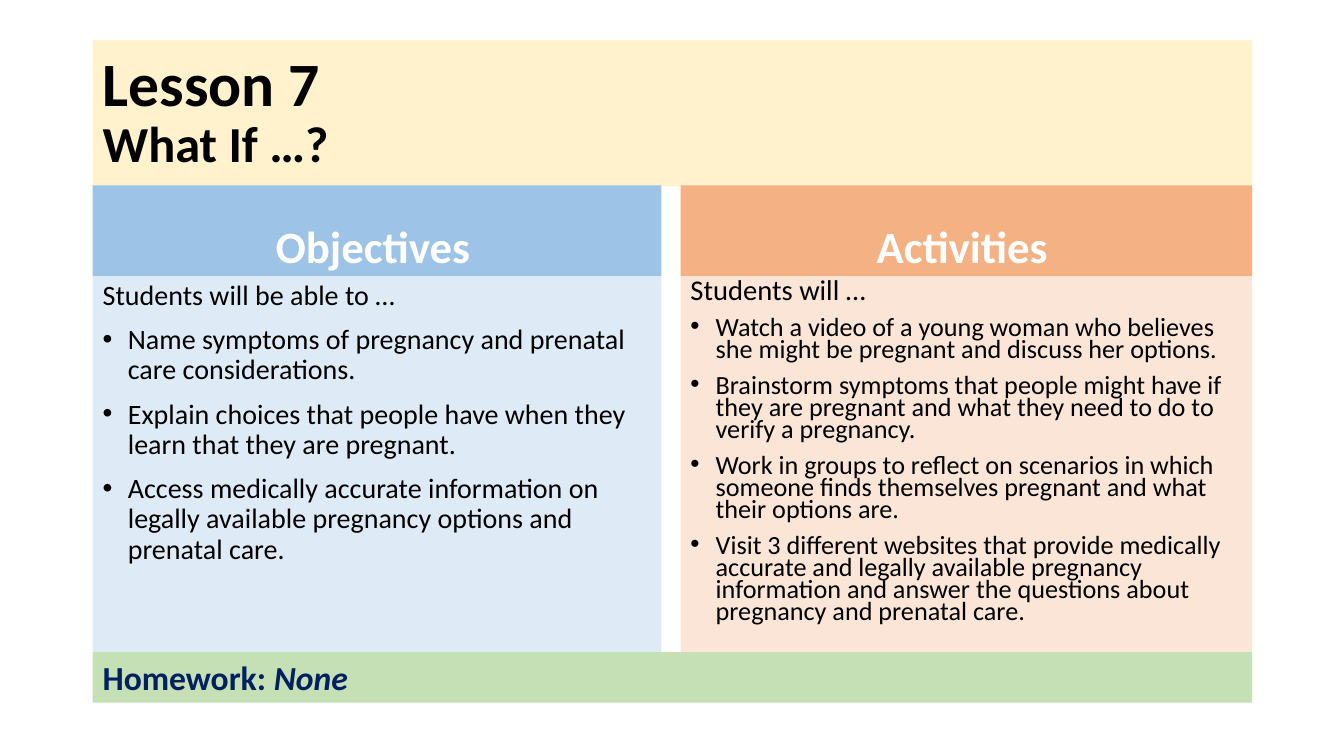
"""Build the Lesson 7 overview slide with objectives, activities and homework."""
from dataclasses import dataclass, field
from typing import Any

from lxml import etree
from pptx import Presentation
from pptx import util as u
from pptx.dml import color
from pptx.enum import shapes, text
from pptx.oxml import ns

LEFT, WIDTH = 0.92, 11.5
RIGHT_LEFT, LEFT_WIDTH, RIGHT_WIDTH = 6.75, 5.64, 5.67
TITLE_TOP, HEAD_TOP, BODY_TOP, HOMEWORK_TOP = 0.4, 1.84, 2.74, 6.47
BLACK, WHITE, NAVY = "000000", "FFFFFF", "002060"


@dataclass
class Run:
    text: str
    size: float
    hue: str = BLACK
    fmt: dict[str, Any] = field(default_factory=dict)


@dataclass
class Para:
    runs: list[Run]
    fmt: dict[str, Any] = field(default_factory=dict)
    bullet: bool = False


@dataclass
class Panel:
    box: tuple[float, float, float, float]
    fill: str
    paras: list[Para]
    frame: dict[str, Any] = field(default_factory=dict)


def rgb(value: str) -> color.RGBColor:
    return color.RGBColor.from_string(value)


def apply(target: Any, fmt: dict[str, Any]) -> None:
    for name, value in fmt.items():
        setattr(target, name, value)


def add_bullet(p: Any) -> None:
    ppr = p._p.get_or_add_pPr()
    ppr.set("marL", str(u.Inches(0.25)))
    ppr.set("indent", str(u.Inches(-0.25)))
    etree.SubElement(ppr, ns.qn("a:buFont")).set("typeface", "Arial")
    etree.SubElement(ppr, ns.qn("a:buChar")).set("char", "•")


def write_para(p: Any, para: Para) -> None:
    apply(p, {"alignment": text.PP_ALIGN.LEFT} | para.fmt)
    if para.bullet:
        add_bullet(p)
    for i, run in enumerate(para.runs):
        if i and para.runs[i - 1].size != run.size:
            p.add_line_break()
        r = p.add_run()
        r.text = run.text
        apply(r.font, {"name": "Calibri", "size": u.Pt(run.size)} | run.fmt)
        r.font.color.rgb = rgb(run.hue)


def draw_panel(s: Any, panel: Panel) -> None:
    sp = s.shapes.add_shape(shapes.MSO_SHAPE.RECTANGLE, *map(u.Inches, panel.box))
    sp.shadow.inherit = False
    sp.fill.solid()
    sp.fill.fore_color.rgb = rgb(panel.fill)
    sp.line.fill.background()
    tf = sp.text_frame
    apply(tf, {"word_wrap": True, "vertical_anchor": text.MSO_ANCHOR.TOP} | panel.frame)
    for i, para in enumerate(panel.paras):
        write_para(tf.add_paragraph() if i else tf.paragraphs[0], para)


def heading(left: float, width: float, fill: str, label: str) -> Panel:
    para = Para([Run(label, 32, WHITE, {"bold": True})], {"alignment": text.PP_ALIGN.CENTER})
    frame = {"vertical_anchor": text.MSO_ANCHOR.BOTTOM,
             "margin_bottom": u.Inches(0.04), "margin_right": u.Inches(0.18)}
    return Panel((left, HEAD_TOP, width, BODY_TOP - HEAD_TOP), fill, [para], frame)


def body(left: float, width: float, fill: str, intro: Run, size: float,
         spacing: float, items: list[str]) -> Panel:
    fmt = {"line_spacing": spacing, "space_before": u.Pt(10)}
    paras = [Para([intro], fmt)] + [Para([Run(item, size)], fmt, True) for item in items]
    return Panel((left, BODY_TOP, width, HOMEWORK_TOP - BODY_TOP), fill, paras)


OBJECTIVES = [
    "Name symptoms of pregnancy and prenatal care considerations.",
    "Explain choices that people have when they learn that they are pregnant.",
    "Access medically accurate information on legally available pregnancy options "
    "and prenatal care.",
]
ACTIVITIES = [
    "Watch a video of a young woman who believes she might be pregnant and discuss her options.",
    "Brainstorm symptoms that people might have if they are pregnant and what they need "
    "to do to verify a pregnancy.",
    "Work in groups to reflect on scenarios in which someone finds themselves pregnant "
    "and what their options are.",
    "Visit 3 different websites that provide medically accurate and legally available "
    "pregnancy information and answer the questions about pregnancy and prenatal care.",
]
MIDDLE = {"vertical_anchor": text.MSO_ANCHOR.MIDDLE}
BOLD = {"bold": True}
PANELS = [
    Panel((LEFT, TITLE_TOP, WIDTH, 1.45), "FFF2CC",
          [Para([Run("Lesson 7", 44, BLACK, BOLD), Run("What If …?", 36, BLACK, BOLD)],
                {"line_spacing": 0.9})], MIDDLE),
    heading(LEFT, LEFT_WIDTH, "9DC3E6", "Objectives"),
    body(LEFT, LEFT_WIDTH, "DEEBF7", Run("Students will be able to …", 20), 20, 0.9, OBJECTIVES),
    heading(RIGHT_LEFT, RIGHT_WIDTH, "F4B183", "Activities"),
    body(RIGHT_LEFT, RIGHT_WIDTH, "FBE5D6", Run("Students will …", 20.4), 18.7, 0.7, ACTIVITIES),
    Panel((LEFT, HOMEWORK_TOP, WIDTH, 0.5), "C5E0B4",
          [Para([Run("Homework: ", 24, NAVY, BOLD),
                 Run("None", 24, NAVY, BOLD | {"italic": True})])]),
]


def main() -> None:
    prs = Presentation()
    apply(prs, {"slide_width": u.Inches(13.33), "slide_height": u.Inches(7.5)})
    s = prs.slides.add_slide(prs.slide_layouts[6])
    for panel in PANELS:
        draw_panel(s, panel)
    prs.save("out.pptx")


if __name__ == "__main__":
    main()
